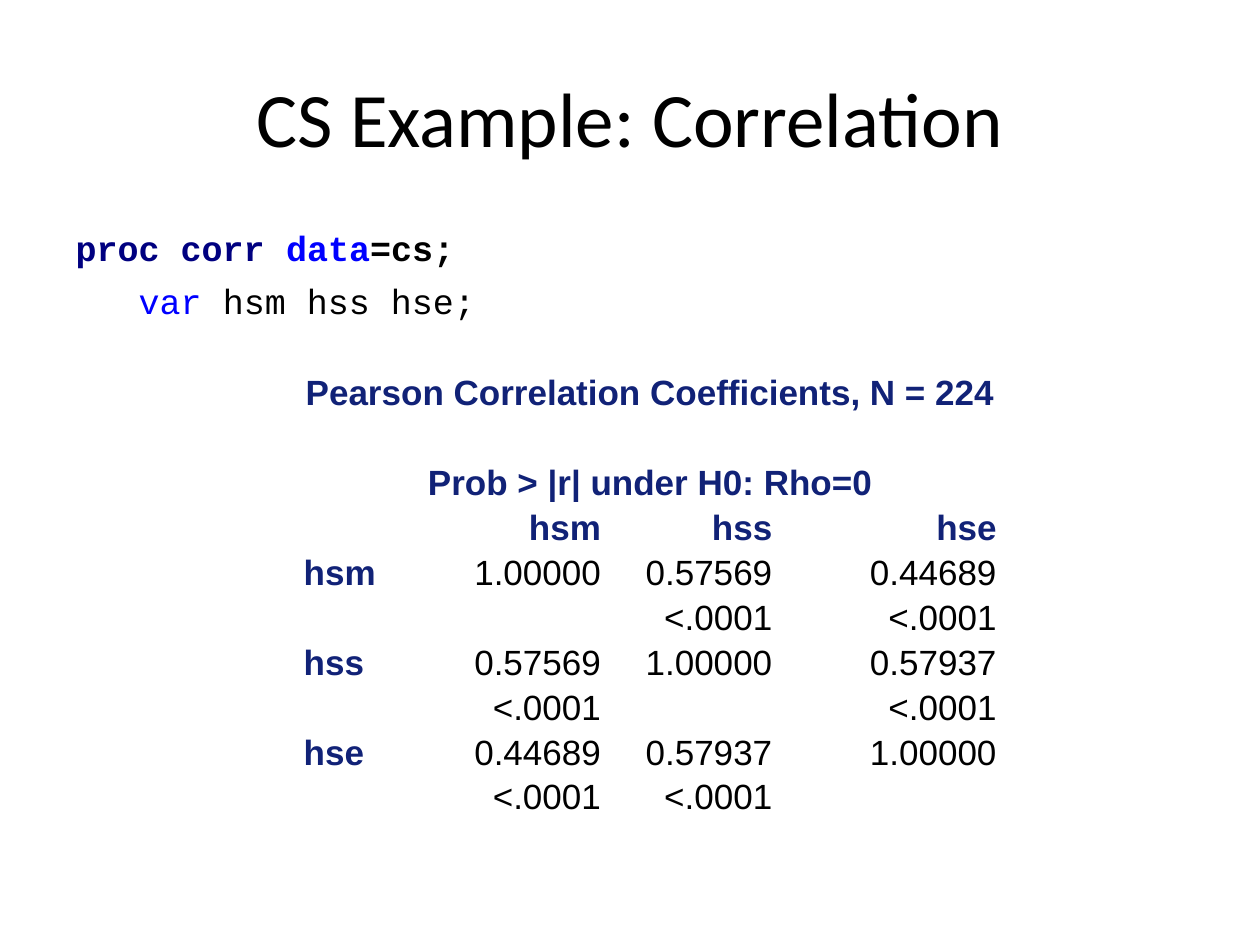
import pptx
import pptx.util
import pptx.dml.color
import pptx.enum.text
import pptx.oxml.ns
import lxml.etree

Inches = pptx.util.Inches
Pt = pptx.util.Pt
RGBColor = pptx.dml.color.RGBColor
ALIGN = pptx.enum.text.PP_ALIGN

BLACK = RGBColor(0x00, 0x00, 0x00)
KEYWORD = RGBColor(0x00, 0x00, 0xFF)
PROCEDURE = RGBColor(0x00, 0x00, 0x80)
HEADING = RGBColor(0x11, 0x22, 0x77)

CODE_LINES = [
    (0, True, [("proc corr ", PROCEDURE), ("data", KEYWORD), ("=cs;", BLACK)]),
    (0.5, False, [("var ", KEYWORD), ("hsm hss hse;", BLACK)]),
]
CAPTIONS = ["Pearson Correlation Coefficients, N = 224",
            "Prob > |r| under H0: Rho=0"]
VARIABLES = ["hsm", "hss", "hse"]
COEFFICIENTS = [
    ["1.00000", "0.57569", "0.44689"],
    ["0.57569", "1.00000", "0.57937"],
    ["0.44689", "0.57937", "1.00000"],
]
P_VALUE = "<.0001"
COLUMN_WIDTHS = [0.78, 1.72, 1.36, 1.78]
ROW_HEIGHT = 0.35


def place(item, box):
    item.left, item.top, item.width, item.height = [Inches(n) for n in box]


def add_span(para, text, font, size, color, bold=False):
    span = para.add_run()
    span.text = text
    span.font.name = font
    span.font.size = Pt(size)
    span.font.bold = bold
    span.font.color.rgb = color


def fill_title(title, box):
    place(title, box)
    title.text_frame.vertical_anchor = pptx.enum.text.MSO_ANCHOR.MIDDLE
    para = title.text_frame.paragraphs[0]
    para.alignment = ALIGN.CENTER
    add_span(para, "CS Example: Correlation", "Calibri", 44, BLACK)


def fill_code(body, box):
    place(body, box)
    frame = body.text_frame
    for number, (indent, bold, spans) in enumerate(CODE_LINES):
        para = frame.add_paragraph() if number else frame.paragraphs[0]
        para.space_before = Pt(6)
        props = para._p.get_or_add_pPr()
        props.set("marL", str(Inches(indent)))
        props.set("indent", "0")
        lxml.etree.SubElement(props, pptx.oxml.ns.qn("a:buNone"))
        for text, color in spans:
            add_span(para, text, "Courier New", 20, color, bold)


def write_cell(para, text, align, heading=False):
    para.alignment = align
    para.line_spacing = 1.15
    add_span(para, text, "Arial", 20, HEADING if heading else BLACK, heading)


def add_correlations(page, box):
    row_count = 2 + 2 * len(VARIABLES)
    table = page.shapes.add_table(row_count, len(COLUMN_WIDTHS),
                                  *[Inches(n) for n in box]).table
    table.first_row = table.horz_banding = False
    for column, width in zip(table.columns, COLUMN_WIDTHS):
        column.width = Inches(width)
    for row in table.rows:
        row.height = Inches(ROW_HEIGHT)
    table.rows[0].height = Inches(3 * ROW_HEIGHT)
    for cell in table.iter_cells():
        cell.fill.background()
        cell.margin_left = cell.margin_right = Inches(0.07)
        cell.margin_top = cell.margin_bottom = 0

    caption = table.cell(0, 0)
    caption.merge(table.cell(0, len(VARIABLES)))
    first = caption.text_frame.paragraphs[0]
    second = caption.text_frame.add_paragraph()
    second.space_before = Pt(25.7)
    for para, text in zip((first, second), CAPTIONS):
        write_cell(para, text, ALIGN.CENTER, True)

    def write(row, column, text, align=ALIGN.RIGHT, heading=False):
        para = table.cell(row, column).text_frame.paragraphs[0]
        write_cell(para, text, align, heading)

    for i, name in enumerate(VARIABLES):
        top = 2 + 2 * i
        write(1, i + 1, name, heading=True)
        table.cell(top, 0).merge(table.cell(top + 1, 0))
        write(top, 0, name, ALIGN.LEFT, True)
        for j, value in enumerate(COEFFICIENTS[i]):
            write(top, j + 1, value)
            if i != j:
                write(top + 1, j + 1, P_VALUE)


def main():
    deck = pptx.Presentation()
    deck.slide_width, deck.slide_height = Inches(10), Inches(7.5)
    page = deck.slides.add_slide(deck.slide_layouts[1])
    fill_title(page.shapes.title, (0.5, 0.3, 9, 1.25))
    fill_code(page.placeholders[1], (0.5, 1.75, 9, 2.6))
    add_correlations(page, (2.34, 2.92, 5.64, 3.5))
    deck.save("out.pptx")


if __name__ == "__main__":
    main()
